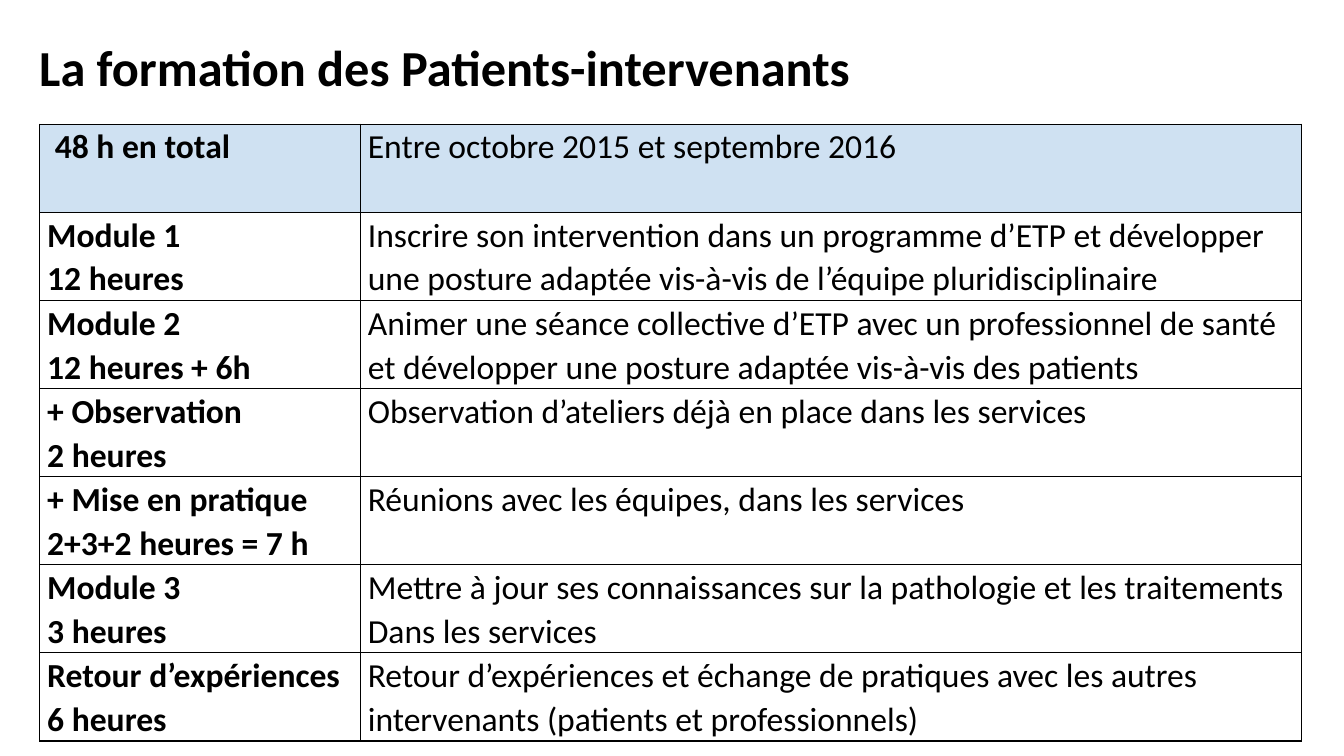
from pptx import Presentation
from pptx.dml.color import RGBColor
from pptx.enum.text import MSO_ANCHOR
from pptx.oxml import parse_xml
from pptx.oxml.ns import nsdecls, qn
from pptx.util import Cm, Pt

FONT = "Calibri"
BLACK = "000000"
HEADER_BLUE = "5B9BD5"
HEADER_ALPHA = 29

ROWS = [
    (" 48 h en total", "Entre octobre 2015 et septembre 2016"),
    ("Module 1\n12 heures",
     "Inscrire son intervention dans un programme d’ETP et développer "
     "une posture adaptée vis-à-vis de l’équipe pluridisciplinaire"),
    ("Module 2\n12 heures + 6h",
     "Animer une séance collective d’ETP avec un professionnel de santé "
     "et développer une posture adaptée vis-à-vis des patients"),
    ("+ Observation\n2 heures",
     "Observation d’ateliers déjà en place dans les services"),
    ("+ Mise en pratique\n2+3+2 heures = 7 h",
     "Réunions avec les équipes, dans les services"),
    ("Module 3\n3 heures",
     "Mettre à jour ses connaissances sur la pathologie et les traitements\n"
     "Dans les services"),
    ("Retour d’expériences\n6 heures",
     "Retour d’expériences et échange de pratiques avec les autres "
     "intervenants (patients et professionnels)"),
]


def rgb(color):
    return RGBColor.from_string(color)


def write_text(tf, text, size, bold, spacing):
    tf.text = text
    tf.word_wrap = True
    for p in tf.paragraphs:
        p.line_spacing = spacing
        for r in p.runs:
            r.font.name = FONT
            r.font.size = Pt(size)
            r.font.bold = bold
            r.font.color.rgb = rgb(color=BLACK)


def add_title(s, text):
    sp = s.shapes.add_textbox(Cm(0.74), Cm(0.71), Cm(32.23), Cm(2.11))
    tf = sp.text_frame
    tf.vertical_anchor = MSO_ANCHOR.MIDDLE
    write_text(tf, text, 36, True, 0.9)


def add_borders(cell):
    tcPr = cell._tc.get_or_add_tcPr()
    for side in ("lnL", "lnR", "lnT", "lnB"):
        tcPr.append(parse_xml(
            f'<a:{side} {nsdecls("a")} w="{Pt(1)}"><a:solidFill>'
            f'<a:srgbClr val="{BLACK}"/></a:solidFill></a:{side}>'))


def fill_header(cell):
    cell.fill.solid()
    cell.fill.fore_color.rgb = rgb(HEADER_BLUE)
    color = cell._tc.tcPr.find(qn("a:solidFill")).find(qn("a:srgbClr"))
    color.append(parse_xml(
        f'<a:alpha {nsdecls("a")} val="{HEADER_ALPHA * 1000}"/>'))


def format_cell(cell, text, bold, header):
    cell.margin_left = cell.margin_right = Cm(0.19)
    cell.margin_top = cell.margin_bottom = 0
    write_text(cell.text_frame, text, 24, bold, 1.07)
    add_borders(cell)
    if header:
        fill_header(cell)
    else:
        cell.fill.background()


def add_program_table(s, rows):
    widths = (Cm(8.08), Cm(23.72))
    row_height = Cm(2.22)
    table = s.shapes.add_table(
        len(rows), len(widths), Cm(1), Cm(3.13),
        sum(widths), row_height * len(rows)).table
    table.first_row = False
    table.horz_banding = False
    for column, width in zip(table.columns, widths):
        column.width = width
    for i, texts in enumerate(rows):
        table.rows[i].height = row_height
        for j, text in enumerate(texts):
            format_cell(table.cell(i, j), text, bold=j == 0, header=i == 0)


def main():
    prs = Presentation()
    prs.slide_width = Cm(33.87)
    prs.slide_height = Cm(19.05)
    s = prs.slides.add_slide(prs.slide_layouts[6])
    add_title(s, "La formation des Patients-intervenants")
    add_program_table(s, ROWS)
    prs.save("out.pptx")


if __name__ == "__main__":
    main()
